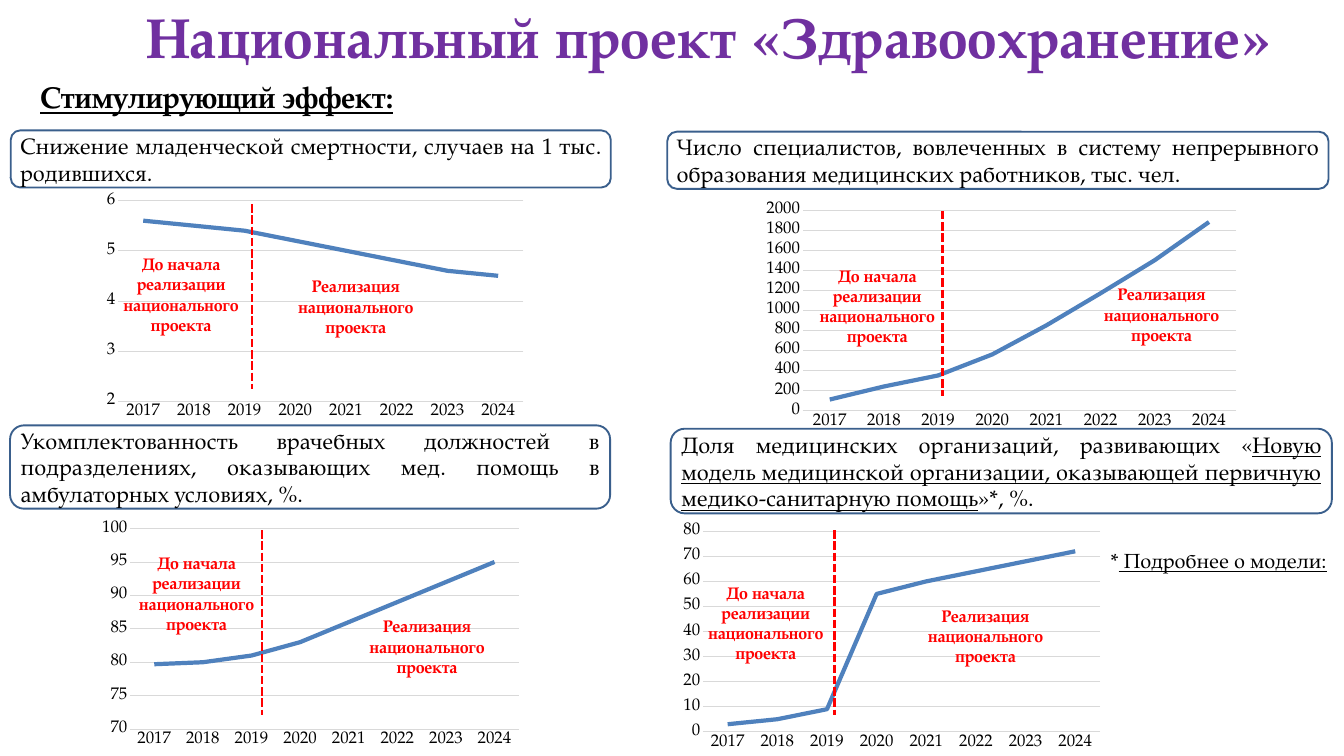
"""Build the slide on the stimulating effect of the national health project."""
from dataclasses import dataclass

from lxml.etree import SubElement
from pptx import Presentation
from pptx.chart.data import CategoryChartData
from pptx.dml.color import RGBColor
from pptx.enum.chart import XL_CHART_TYPE, XL_MARKER_STYLE, XL_TICK_MARK
from pptx.enum.dml import MSO_LINE
from pptx.enum.shapes import MSO_CONNECTOR, MSO_SHAPE
from pptx.enum.text import MSO_ANCHOR, MSO_AUTO_SIZE, PP_ALIGN
from pptx.oxml.ns import qn
from pptx.util import Inches, Pt

COLUMNS = 20
YEARS = [str(year) for year in range(2017, 2025)]
BEFORE_LABEL = "До начала реализации национального проекта"
DURING_LABEL = "Реализация национального проекта"


@dataclass(frozen=True)
class Theme:
    """Colours, type sizes and line widths of the slide."""

    font: str = "TeX Gyre Pagella"
    title: RGBColor = RGBColor(0x70, 0x30, 0xA0)
    text: RGBColor = RGBColor(0, 0, 0)
    accent: RGBColor = RGBColor(0xFF, 0, 0)
    border: RGBColor = RGBColor(0x3A, 0x5F, 0x8C)
    series: RGBColor = RGBColor(0x4F, 0x81, 0xBD)
    grid: RGBColor = RGBColor(0xD9, 0xD9, 0xD9)
    title_size: float = 60
    heading_size: float = 32
    body_size: float = 24
    note_size: float = 22
    label_size: float = 18
    title_leading: float = 47.2
    title_tracking: int = 110
    border_width: float = 2
    grid_width: float = 0.75
    series_width: float = 4.5
    divider_width: float = 3


@dataclass(frozen=True)
class Panel:
    """One indicator: its caption, chart, divider and phase labels."""

    caption: list
    box: tuple
    chart: tuple
    scale: tuple
    values: list
    divider: tuple
    before: tuple
    during: tuple


PANELS = [
    Panel(
        [("Снижение младенческой смертности, случаев на 1 тыс. родившихся.", False)],
        (0.16, 1.94, 8.93, 0.85), (1.46, 2.79, 6.46, 3.54), (2, 6, 1),
        [5.6, 5.5, 5.4, 5.2, 5, 4.8, 4.6, 4.5],
        (3.75, 3.04), (1.51, 3.73), (4.11, 4.06),
    ),
    Panel(
        [("Число специалистов, вовлеченных в систему непрерывного образования "
          "медицинских работников, тыс. чел.", False)],
        (9.93, 1.96, 9.84, 0.85), (11.26, 2.93, 7.28, 3.54), (0, 2000, 200),
        [110, 240, 350, 560, 850, 1170, 1500, 1880],
        (14.03, 3.14), (11.87, 3.9), (16.1, 4.18),
    ),
    Panel(
        [("Укомплектованность врачебных должностей в подразделениях, оказывающих "
          "мед. помощь в амбулаторных условиях, %.", False)],
        (0.15, 6.33, 8.93, 1.24), (1.39, 7.67, 6.46, 3.54), (70, 100, 5),
        [79.7, 80, 81, 83, 86, 89, 92, 95],
        (3.9, 7.89), (1.74, 8.18), (5.17, 9.12),
    ),
    Panel(
        [("Доля медицинских организаций, развивающих «", False),
         ("Новую модель медицинской организации, оказывающей первичную "
          "медико-санитарную помощь", True),
         ("»*, %.", False)],
        (9.98, 6.38, 9.84, 1.26), (10.04, 7.71, 6.46, 3.54), (0, 80, 10),
        [3, 5, 9, 55, 60, 64, 68, 72],
        (12.42, 7.89), (10.21, 8.62), (13.48, 8.96),
    ),
]


def write_text(frame, runs, *, font, size, color, bold=False, align=PP_ALIGN.LEFT,
               leading=None, tracking=None):
    """Write (text, underline) runs as the only paragraph of a frame."""
    paragraph = frame.paragraphs[0]
    paragraph.alignment = align
    if leading:
        paragraph.line_spacing = Pt(leading)
    for text, underline in runs:
        run = paragraph.add_run()
        run.text = text
        run.font.name, run.font.size, run.font.bold = font, Pt(size), bold
        run.font.underline = underline
        run.font.color.rgb = color
        if tracking:
            run.font._element.set("spc", str(tracking))


class SlideBuilder:
    """Holds the theme and the current slide and adds elements to it."""

    def __init__(self, presentation, theme):
        """Open a title-only slide with a grid of square cells."""
        self.theme = theme
        self.slide = presentation.slides.add_slide(presentation.slide_layouts[5])
        self.shapes = self.slide.shapes
        self.cell = presentation.slide_width / COLUMNS

    def place(self, *cells):
        """Turn columns and rows into lengths."""
        return [round(count * self.cell) for count in cells]

    def title(self, text, area):
        """Move and format the title placeholder."""
        theme, shape = self.theme, self.shapes.title
        shape.left, shape.top, shape.width, shape.height = self.place(*area)
        frame = shape.text_frame
        frame.margin_left = frame.margin_right = frame.margin_top = frame.margin_bottom = 0
        frame.vertical_anchor = MSO_ANCHOR.TOP
        frame.auto_size, frame.word_wrap = MSO_AUTO_SIZE.NONE, True
        write_text(frame, [(text, False)], font=theme.font, size=theme.title_size,
                   color=theme.title, bold=True, align=PP_ALIGN.CENTER,
                   leading=theme.title_leading, tracking=theme.title_tracking)

    def text(self, runs, area, wrap=False, **style):
        """Add a text box."""
        frame = self.shapes.add_textbox(*self.place(*area)).text_frame
        frame.word_wrap = wrap
        write_text(frame, runs, font=self.theme.font, **style)

    def phase_label(self, text, position, height):
        """Add a label for a phase of the project."""
        self.text([(text, False)], (*position, 2.37, height), wrap=True, bold=True,
                  size=self.theme.label_size, color=self.theme.accent,
                  align=PP_ALIGN.CENTER)

    def caption(self, runs, area):
        """Add a rounded outline with justified text."""
        theme = self.theme
        shape = self.shapes.add_shape(MSO_SHAPE.ROUNDED_RECTANGLE, *self.place(*area))
        shape.shadow.inherit = False
        shape.fill.background()
        shape.line.color.rgb, shape.line.width = theme.border, Pt(theme.border_width)
        shape.text_frame.word_wrap = True
        shape.text_frame.vertical_anchor = MSO_ANCHOR.MIDDLE
        write_text(shape.text_frame, runs, font=theme.font, size=theme.body_size,
                   color=theme.text, align=PP_ALIGN.JUSTIFY)

    def divider(self, column, row):
        """Add the dashed line that marks the start of the project."""
        line = self.shapes.add_connector(
            MSO_CONNECTOR.STRAIGHT, *self.place(column, row, column, row + 2.75))
        line.line.color.rgb = self.theme.accent
        line.line.width = Pt(self.theme.divider_width)
        line.line.dash_style = MSO_LINE.SQUARE_DOT
        SubElement(line._element.spPr, qn("a:effectLst"))

    def line_chart(self, values, scale, area):
        """Add a line chart of one indicator by year."""
        theme, data = self.theme, CategoryChartData()
        data.categories = YEARS
        data.add_series("Series 1", values)
        chart = self.shapes.add_chart(XL_CHART_TYPE.LINE, *self.place(*area), data).chart
        chart.has_legend = chart.has_title = False
        chart.font.name, chart.font.size = theme.font, Pt(theme.label_size)
        chart.font.color.rgb = theme.text
        chart.plots[0].vary_by_categories = False
        series = chart.plots[0].series[0]
        series.smooth = False
        series.marker.style = XL_MARKER_STYLE.NONE
        value_axis = chart.value_axis
        value_axis.minimum_scale, value_axis.maximum_scale, value_axis.major_unit = scale
        value_axis.format.line.fill.background()
        for axis in (chart.category_axis, value_axis):
            axis.major_tick_mark = axis.minor_tick_mark = XL_TICK_MARK.NONE
        for line, color, width in (
            (series.format.line, theme.series, theme.series_width),
            (chart.category_axis.format.line, theme.grid, theme.grid_width),
            (value_axis.major_gridlines.format.line, theme.grid, theme.grid_width),
        ):
            line.color.rgb, line.width = color, Pt(width)

    def panel(self, panel):
        """Add all parts of one indicator."""
        self.caption(panel.caption, panel.box)
        self.line_chart(panel.values, panel.scale, panel.chart)
        self.phase_label(BEFORE_LABEL, panel.before, 1.31)
        self.phase_label(DURING_LABEL, panel.during, 1.01)
        self.divider(*panel.divider)


def main():
    """Build and save the presentation."""
    presentation = Presentation()
    presentation.slide_width, presentation.slide_height = Inches(20), Inches(11.25)
    theme = Theme()
    builder = SlideBuilder(presentation, theme)
    builder.title("Национальный проект «Здравоохранение»", (1, 0.38, 19.08, 0.72))
    builder.text([("Стимулирующий эффект:", True)], (0.5, 1.12, 6.03, 0.64),
                 size=theme.heading_size, color=theme.text, bold=True)
    for panel in PANELS:
        builder.panel(panel)
    builder.text([("*", False), (" Подробнее о модели:", True)], (16.43, 8.1, 3.48, 0.47),
                 size=theme.note_size, color=theme.text)
    presentation.save("out.pptx")


if __name__ == "__main__":
    main()
